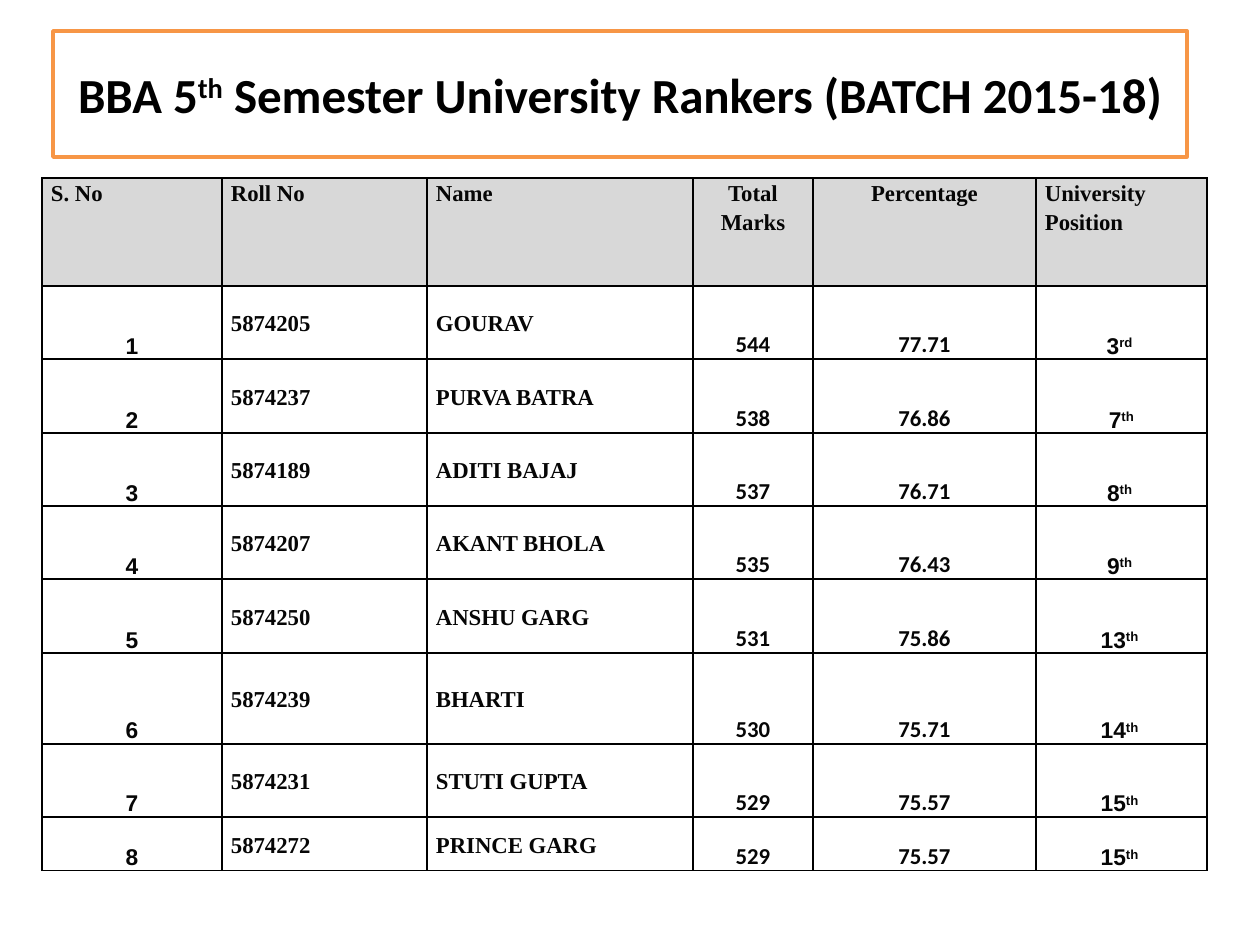
import pptx
import pptx.util
import pptx.dml.color
import pptx.enum.text
import pptx.oxml.ns
import lxml.etree

SCALE = 914400 / 126
HUES = {"ink": "000000", "text": "060606", "head": "D8D8D8",
        "paper": "FFFFFF", "frame": "F79646"}
ALIGN = pptx.enum.text.PP_ALIGN
ANCHOR = pptx.enum.text.MSO_ANCHOR
SERIF, SANS, BODY = "Times New Roman", "Arial", "Calibri"

COLS = [180, 205, 266, 120, 223, 171]
ROWS = [108, 73, 74, 73, 73, 74, 91, 73, 54]
HEADS = ["S. No", "Roll No", "Name", "Total Marks", "Percentage",
         "University Position"]
HEAD_SIDES = [ALIGN.LEFT] * 3 + [ALIGN.CENTER] * 2 + [ALIGN.LEFT]
STYLES = [(SANS, ALIGN.CENTER, ANCHOR.BOTTOM),
          (SERIF, ALIGN.LEFT, ANCHOR.MIDDLE),
          (SERIF, ALIGN.LEFT, ANCHOR.MIDDLE),
          (BODY, ALIGN.CENTER, ANCHOR.BOTTOM),
          (BODY, ALIGN.CENTER, ANCHOR.BOTTOM),
          (SANS, ALIGN.CENTER, ANCHOR.BOTTOM)]
RANKS = [("5874205", "GOURAV", "544", "77.71", "3", "rd "),
         ("5874237", "PURVA BATRA", "538", "76.86", "7", "th"),
         ("5874189", "ADITI BAJAJ", "537", "76.71", "8", "th "),
         ("5874207", "AKANT BHOLA", "535", "76.43", "9", "th "),
         ("5874250", "ANSHU GARG", "531", "75.86", "13", "th "),
         ("5874239", "BHARTI", "530", "75.71", "14", "th "),
         ("5874231", "STUTI GUPTA", "529", "75.57", "15", "th "),
         ("5874272", "PRINCE GARG", "529", "75.57", "15", "th ")]


def px(n):
    """Turn pixels into EMU."""
    return pptx.util.Emu(round(n * SCALE))


def hue(name):
    """Look up a colour by name."""
    return pptx.dml.color.RGBColor.from_string(HUES[name])


def add_run(para, text, face, size, tint, raised=False):
    """Add one bold run, raised when it is an ordinal ending."""
    run = para.add_run()
    run.text = text
    run.font.name = face
    run.font.size = pptx.util.Pt(size)
    run.font.bold = True
    run.font.color.rgb = hue(tint)
    if raised:
        run._r.get_or_add_rPr().set("baseline", "30000")


def add_edges(cell):
    """Draw a thin line on all four sides of a cell."""
    props = cell._tc.get_or_add_tcPr()
    qn = pptx.oxml.ns.qn
    for side in ("a:lnL", "a:lnR", "a:lnT", "a:lnB"):
        line = lxml.etree.SubElement(props, qn(side), w="12700")
        fill = lxml.etree.SubElement(line, qn("a:solidFill"))
        lxml.etree.SubElement(fill, qn("a:srgbClr"), val=HUES["ink"])


def fill_cell(cell, parts, style, tint):
    """Format a cell and write its parts, the second one raised."""
    face, side, anchor = style
    add_edges(cell)
    cell.fill.solid()
    cell.fill.fore_color.rgb = hue(tint)
    cell.margin_left = cell.margin_right = px(9)
    cell.margin_top = cell.margin_bottom = 0
    cell.vertical_anchor = anchor
    para = cell.text_frame.paragraphs[0]
    para.alignment = side
    para.line_spacing = 1.15
    for i, text in enumerate(parts):
        add_run(para, text, face, 13, "text", i == 1)


def add_ranks(slide):
    """Add the table of ranked students."""
    frame = slide.shapes.add_table(len(ROWS), len(COLS), px(42), px(178),
                                   px(sum(COLS)), px(sum(ROWS)))
    table = frame.table
    for col, wide in zip(table.columns, COLS):
        col.width = px(wide)
    for row, high in zip(table.rows, ROWS):
        row.height = px(high)
    for c, (text, side) in enumerate(zip(HEADS, HEAD_SIDES)):
        fill_cell(table.cell(0, c), [text], (SERIF, side, ANCHOR.TOP), "head")
    for r, (*plain, place, end) in enumerate(RANKS, 1):
        cells = [[str(r)]] + [[text] for text in plain] + [[place, end]]
        for c, (parts, style) in enumerate(zip(cells, STYLES)):
            fill_cell(table.cell(r, c), parts, style, "paper")


def add_title(slide):
    """Place and write the framed title."""
    title = slide.shapes.title
    title.left, title.top = px(53), px(31)
    title.width, title.height = px(1134), px(126)
    title.fill.solid()
    title.fill.fore_color.rgb = hue("paper")
    title.line.color.rgb = hue("frame")
    title.line.width = pptx.util.Pt(2)
    text = title.text_frame
    text.word_wrap = True
    text.auto_size = pptx.enum.text.MSO_AUTO_SIZE.NONE
    text.vertical_anchor = ANCHOR.MIDDLE
    para = text.paragraphs[0]
    para.alignment = ALIGN.CENTER
    add_run(para, "BBA 5", BODY, 28, "ink")
    add_run(para, "th", BODY, 28, "ink", True)
    add_run(para, " Semester University Rankers (BATCH 2015-18)",
            BODY, 28, "ink")


def main():
    """Build the slide and save it."""
    deck = pptx.Presentation()
    deck.slide_width, deck.slide_height = px(1260), px(945)
    slide = deck.slides.add_slide(deck.slide_layouts[5])
    add_ranks(slide)
    add_title(slide)
    deck.save("out.pptx")


if __name__ == "__main__":
    main()
